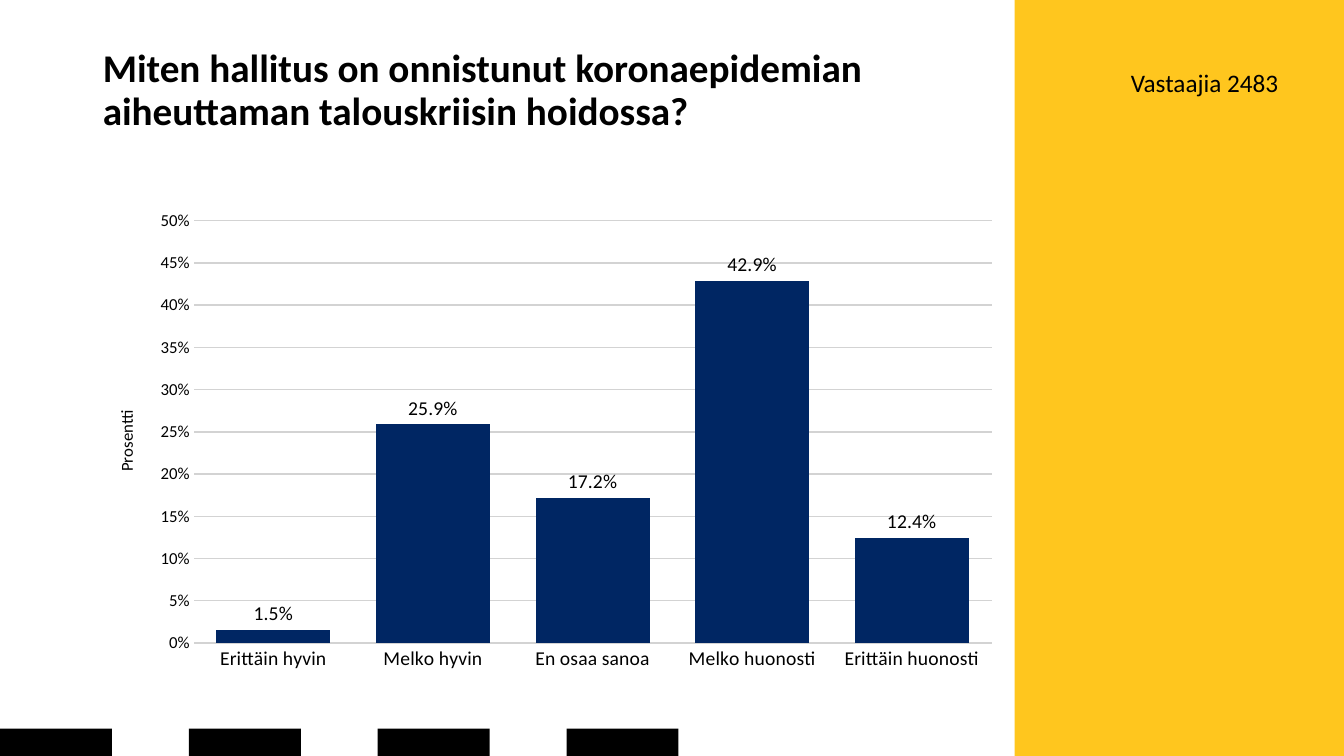
from dataclasses import dataclass

from lxml import etree
from pptx import Presentation
from pptx.chart.chart import Chart
from pptx.chart.data import CategoryChartData
from pptx.dml.color import RGBColor
from pptx.enum.chart import XL_CHART_TYPE, XL_LABEL_POSITION, XL_TICK_MARK
from pptx.enum.shapes import MSO_SHAPE
from pptx.enum.text import MSO_ANCHOR, MSO_AUTO_SIZE, PP_ALIGN
from pptx.oxml.ns import qn
from pptx.slide import Slide
from pptx.text.text import Font
from pptx.util import Pt

COLUMNS = XL_CHART_TYPE.COLUMN_CLUSTERED
OUTSIDE_END = XL_LABEL_POSITION.OUTSIDE_END
TICK_INSIDE = XL_TICK_MARK.INSIDE
RECTANGLE = MSO_SHAPE.RECTANGLE
MIDDLE = MSO_ANCHOR.MIDDLE
TOP = MSO_ANCHOR.TOP
NO_AUTOFIT = MSO_AUTO_SIZE.NONE
LEFT = PP_ALIGN.LEFT
RIGHT = PP_ALIGN.RIGHT

FACE = "Calibri"
BLACK = "000000"
YELLOW = "FFC61E"
NAVY = "002663"
GRID_GREY = "D3D3D3"

SLIDE_WIDTH, SLIDE_HEIGHT = 960, 540
CONTENT_LEFT, CONTENT_WIDTH = 66.24, 655.2
BLOCK_COUNT, BLOCK_STEP = 4, 134.9


@dataclass(frozen=True)
class Block:
    left: float
    top: float
    width: float
    height: float
    color: str


@dataclass(frozen=True)
class Answer:
    label: str
    share: float


SIDE_PANEL = Block(724.8, 0, SLIDE_WIDTH - 724.8, SLIDE_HEIGHT, YELLOW)
FOOTER_BLOCKS = [
    Block(i * BLOCK_STEP, 520.4, 80, 19.6, BLACK) for i in range(BLOCK_COUNT)
]
ANSWERS = [
    Answer("Erittäin hyvin", 0.015),
    Answer("Melko hyvin", 0.259),
    Answer("En osaa sanoa", 0.172),
    Answer("Melko huonosti", 0.429),
    Answer("Erittäin huonosti", 0.124),
]
PLOT_LAYOUT = {"x": 0.11, "y": 0.04, "w": 0.87, "h": 0.88}


def rgb(color: str) -> RGBColor:
    return RGBColor.from_string(color)


def style_font(font: Font, size: float, bold: bool = False) -> None:
    font.name = FACE
    font.size = Pt(size)
    font.bold = bold
    font.color.rgb = rgb(BLACK)


def add_block(slide: Slide, block: Block) -> None:
    rectangle = slide.shapes.add_shape(
        RECTANGLE, Pt(block.left), Pt(block.top), Pt(block.width), Pt(block.height)
    )
    rectangle.shadow.inherit = False
    rectangle.fill.solid()
    rectangle.fill.fore_color.rgb = rgb(block.color)
    rectangle.line.fill.background()


def set_question(slide: Slide) -> None:
    question = slide.shapes.title
    question.left, question.top = Pt(CONTENT_LEFT), Pt(28.8)
    question.width, question.height = Pt(CONTENT_WIDTH), Pt(72.72)
    frame = question.text_frame
    frame.text = "Miten hallitus on onnistunut koronaepidemian aiheuttaman talouskriisin hoidossa?"
    frame.auto_size = NO_AUTOFIT
    frame.vertical_anchor = MIDDLE
    paragraph = frame.paragraphs[0]
    paragraph.alignment = LEFT
    paragraph.line_spacing = 0.9
    style_font(paragraph.runs[0].font, 28, bold=True)


def add_respondent_count(slide: Slide) -> None:
    respondents = slide.shapes.add_textbox(Pt(771.12), Pt(44.64), Pt(149.04), Pt(28.8))
    frame = respondents.text_frame
    frame.word_wrap = True
    frame.vertical_anchor = TOP
    frame.text = "Vastaajia 2483"
    frame.paragraphs[0].alignment = RIGHT
    style_font(frame.paragraphs[0].runs[0].font, 18)


def fix_plot_layout(chart: Chart) -> None:
    """Pin the inner plot area to fixed fractions of the chart."""
    plot_area = chart.element.find(f".//{qn('c:plotArea')}")
    for automatic in plot_area.findall(qn("c:layout")):
        plot_area.remove(automatic)
    layout = etree.Element(qn("c:layout"))
    manual = etree.SubElement(layout, qn("c:manualLayout"))
    settings = {"layoutTarget": "inner", "xMode": "edge", "yMode": "edge", **PLOT_LAYOUT}
    for tag, value in settings.items():
        etree.SubElement(manual, qn(f"c:{tag}")).set("val", str(value))
    plot_area.insert(0, layout)


def style_axes(chart: Chart) -> None:
    for axis, size in ((chart.category_axis, 14), (chart.value_axis, 12)):
        axis.major_tick_mark = TICK_INSIDE
        axis.format.line.fill.background()
        style_font(axis.tick_labels.font, size)

    percent = chart.value_axis
    percent.minimum_scale, percent.maximum_scale = 0, 0.5
    percent.major_unit = 0.05
    percent.tick_labels.number_format = "0%"
    percent.tick_labels.number_format_is_linked = False
    gridline = percent.major_gridlines.format.line
    gridline.color.rgb = rgb(GRID_GREY)
    gridline.width = Pt(1)
    caption = percent.axis_title.text_frame
    caption.text = "Prosentti"
    style_font(caption.paragraphs[0].runs[0].font, 12)


def add_answer_chart(slide: Slide) -> None:
    answers = CategoryChartData(number_format="0.0%")
    answers.categories = [answer.label for answer in ANSWERS]
    answers.add_series("Series 1", [answer.share for answer in ANSWERS])
    chart = slide.shapes.add_chart(
        COLUMNS, Pt(CONTENT_LEFT), Pt(144), Pt(CONTENT_WIDTH), Pt(342.72), answers
    ).chart
    chart.has_title = False
    chart.has_legend = False
    style_font(chart.font, 11)
    style_axes(chart)
    fix_plot_layout(chart)

    plot = chart.plots[0]
    plot.gap_width = 40
    plot.vary_by_categories = False
    columns = plot.series[0]
    columns.format.fill.solid()
    columns.format.fill.fore_color.rgb = rgb(NAVY)
    labels = columns.data_labels
    labels.show_value = True
    labels.position = OUTSIDE_END
    labels.number_format = "0.0%"
    labels.number_format_is_linked = False
    style_font(labels.font, 14)


def main() -> None:
    presentation = Presentation()
    presentation.slide_width = Pt(SLIDE_WIDTH)
    presentation.slide_height = Pt(SLIDE_HEIGHT)
    title_only = presentation.slide_layouts.get_by_name("Title Only")
    slide = presentation.slides.add_slide(title_only)

    for block in (SIDE_PANEL, *FOOTER_BLOCKS):
        add_block(slide, block)
    set_question(slide)
    add_respondent_count(slide)
    add_answer_chart(slide)
    presentation.save("out.pptx")


if __name__ == "__main__":
    main()
